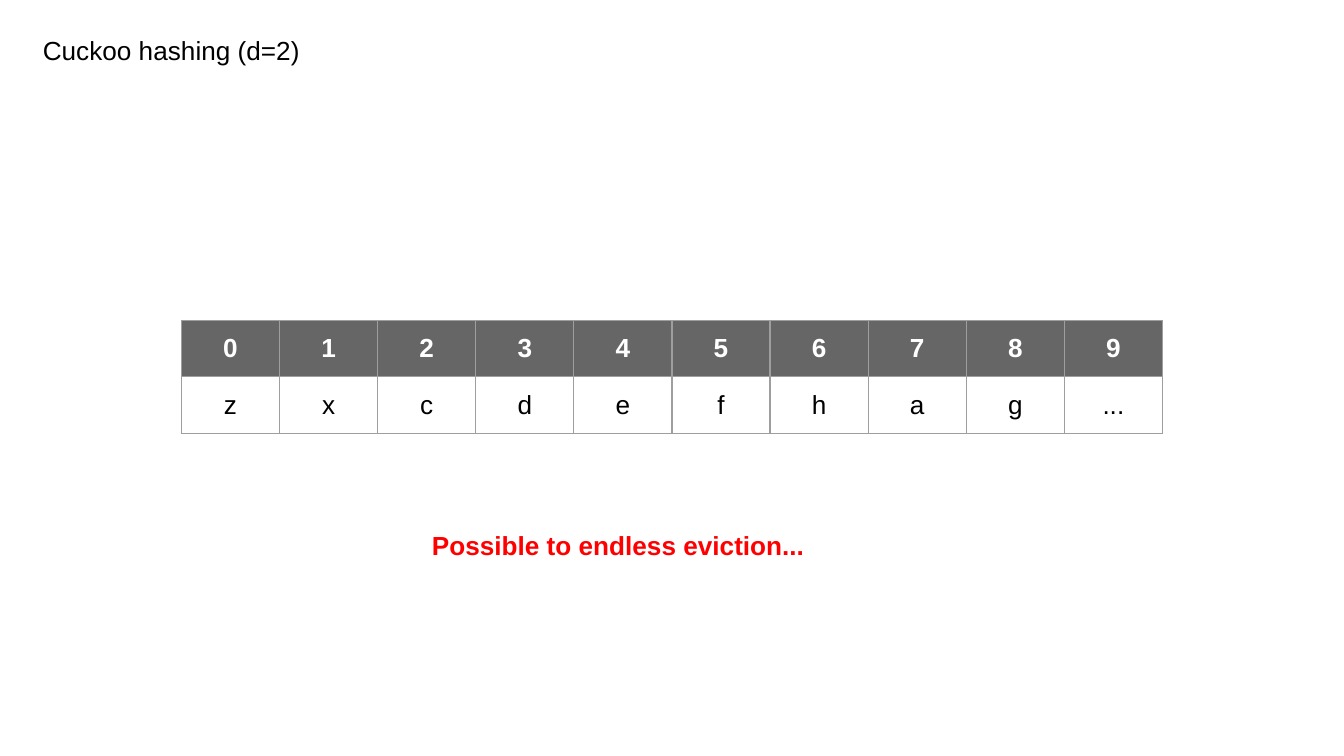
from dataclasses import dataclass
from typing import Any

from lxml.etree import SubElement
from pptx import Presentation
from pptx.dml.color import RGBColor
from pptx.enum.text import MSO_ANCHOR, PP_ALIGN
from pptx.oxml.ns import qn
from pptx.util import Emu, Inches, Pt

SLIDE_WIDTH = Inches(10)
SLIDE_HEIGHT = Emu(SLIDE_WIDTH * 9 // 16)
GRID_UNIT = SLIDE_WIDTH // 100
BORDER_COLOR = "9E9E9E"
INSETS = {f"margin_{side}": Inches(0.1) for side in ("left", "top", "right", "bottom")}
FONT = {"name": "Arial", "size": Pt(14)}


@dataclass(frozen=True)
class Label:
    text: str
    left: float
    top: float
    width: float
    height: float
    color: str
    bold: bool = False


@dataclass(frozen=True)
class TableRow:
    values: list[str]
    color: str
    bold: bool = False
    fill: str | None = None


LABELS = [
    Label("Cuckoo hashing (d=2)", 2.2, 1.55, 27.4, 5, "000000"),
    Label("Possible to endless eviction...", 31.15, 38.4, 32.9, 4.2, "FF0000", True),
]
BUCKETS = [
    TableRow([str(index) for index in range(10)], "FFFFFF", True, "666666"),
    TableRow([*"zxcdefhag", "..."], "000000"),
]


def grid(units: float) -> Emu:
    return Emu(round(units * GRID_UNIT))


def rgb(value: str) -> RGBColor:
    return RGBColor.from_string(value)


def apply_format(target: Any, values: dict[str, Any]) -> None:
    for name, value in values.items():
        setattr(target, name, value)


def write_text(paragraph: Any, text: str, color: str, bold: bool) -> None:
    run = paragraph.add_run()
    run.text = text
    apply_format(run.font, {**FONT, "bold": bold})
    run.font.color.rgb = rgb(color)


def draw_label(slide: Any, label: Label) -> None:
    shape = slide.shapes.add_textbox(
        grid(label.left), grid(label.top), grid(label.width), grid(label.height)
    )
    apply_format(shape.text_frame, {**INSETS, "word_wrap": True})
    write_text(shape.text_frame.paragraphs[0], label.text, label.color, label.bold)


def draw_borders(cell: Any) -> None:
    properties = cell._tc.get_or_add_tcPr()
    for position, side in enumerate(("lnL", "lnR", "lnT", "lnB")):
        line = SubElement(properties, qn(f"a:{side}"), w=str(Pt(0.75)))
        fill = SubElement(line, qn("a:solidFill"))
        SubElement(fill, qn("a:srgbClr"), val=BORDER_COLOR)
        properties.remove(line)
        properties.insert(position, line)


def draw_cell(cell: Any, text: str, row: TableRow) -> None:
    apply_format(cell, {**INSETS, "vertical_anchor": MSO_ANCHOR.MIDDLE})
    if row.fill:
        cell.fill.solid()
        cell.fill.fore_color.rgb = rgb(row.fill)
    else:
        cell.fill.background()
    draw_borders(cell)
    paragraph = cell.text_frame.paragraphs[0]
    paragraph.alignment = PP_ALIGN.CENTER
    write_text(paragraph, text, row.color, row.bold)


def draw_table(
    slide: Any,
    rows: list[TableRow],
    left: float,
    top: float,
    column_width: float,
    row_height: float,
) -> None:
    column_count = len(rows[0].values)
    table = slide.shapes.add_table(
        len(rows),
        column_count,
        grid(left),
        grid(top),
        grid(column_width * column_count),
        grid(row_height * len(rows)),
    ).table
    apply_format(table, {"first_row": False, "horz_banding": False})
    for row_index, row in enumerate(rows):
        for column_index, text in enumerate(row.values):
            draw_cell(table.cell(row_index, column_index), text, row)


def main() -> None:
    presentation = Presentation()
    apply_format(presentation, {"slide_width": SLIDE_WIDTH, "slide_height": SLIDE_HEIGHT})
    slide = presentation.slides.add_slide(presentation.slide_layouts[6])
    draw_table(slide, BUCKETS, 13.5, 23.85, 7.3, 4.17)
    for label in LABELS:
        draw_label(slide, label)
    presentation.save("out.pptx")


if __name__ == "__main__":
    main()
